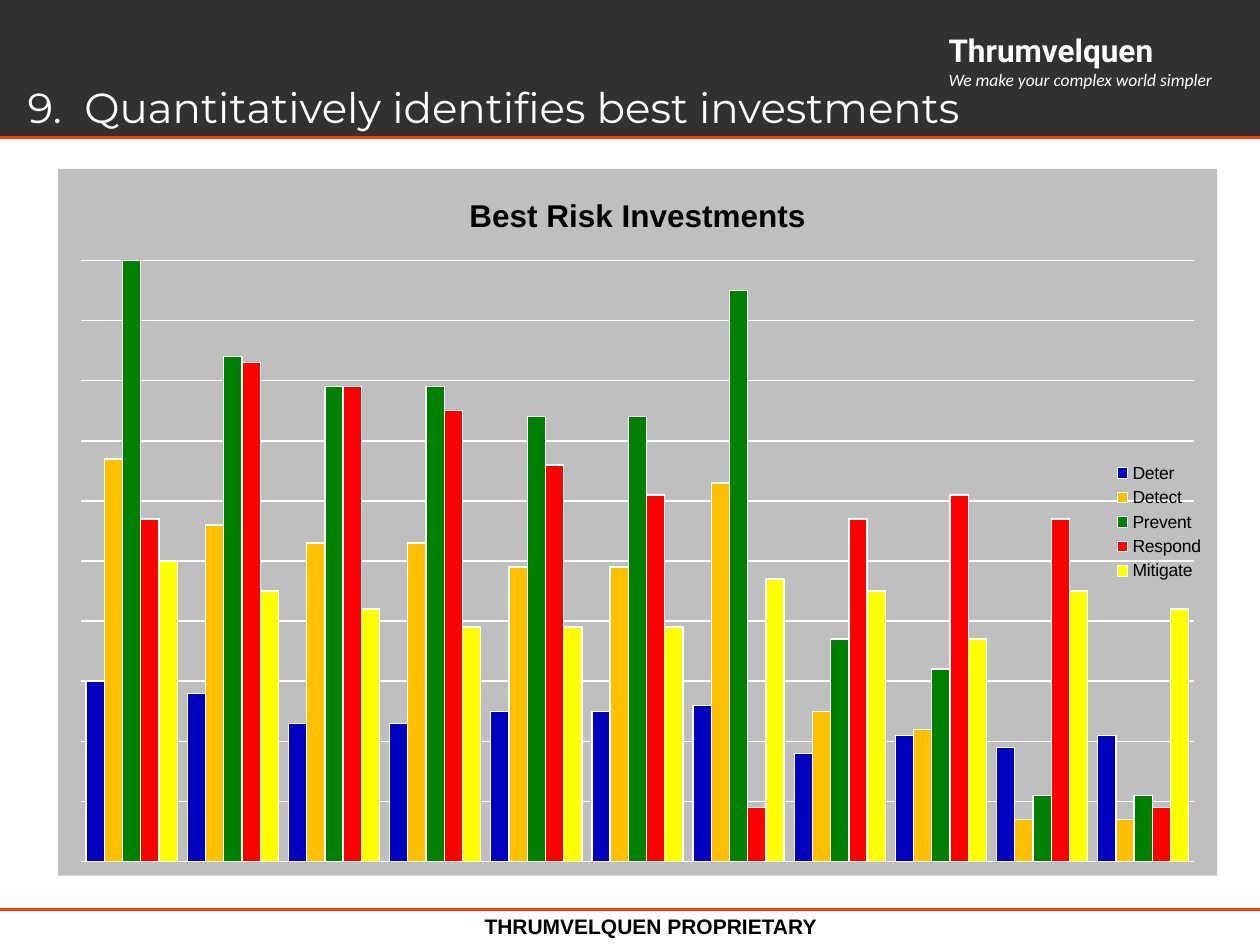
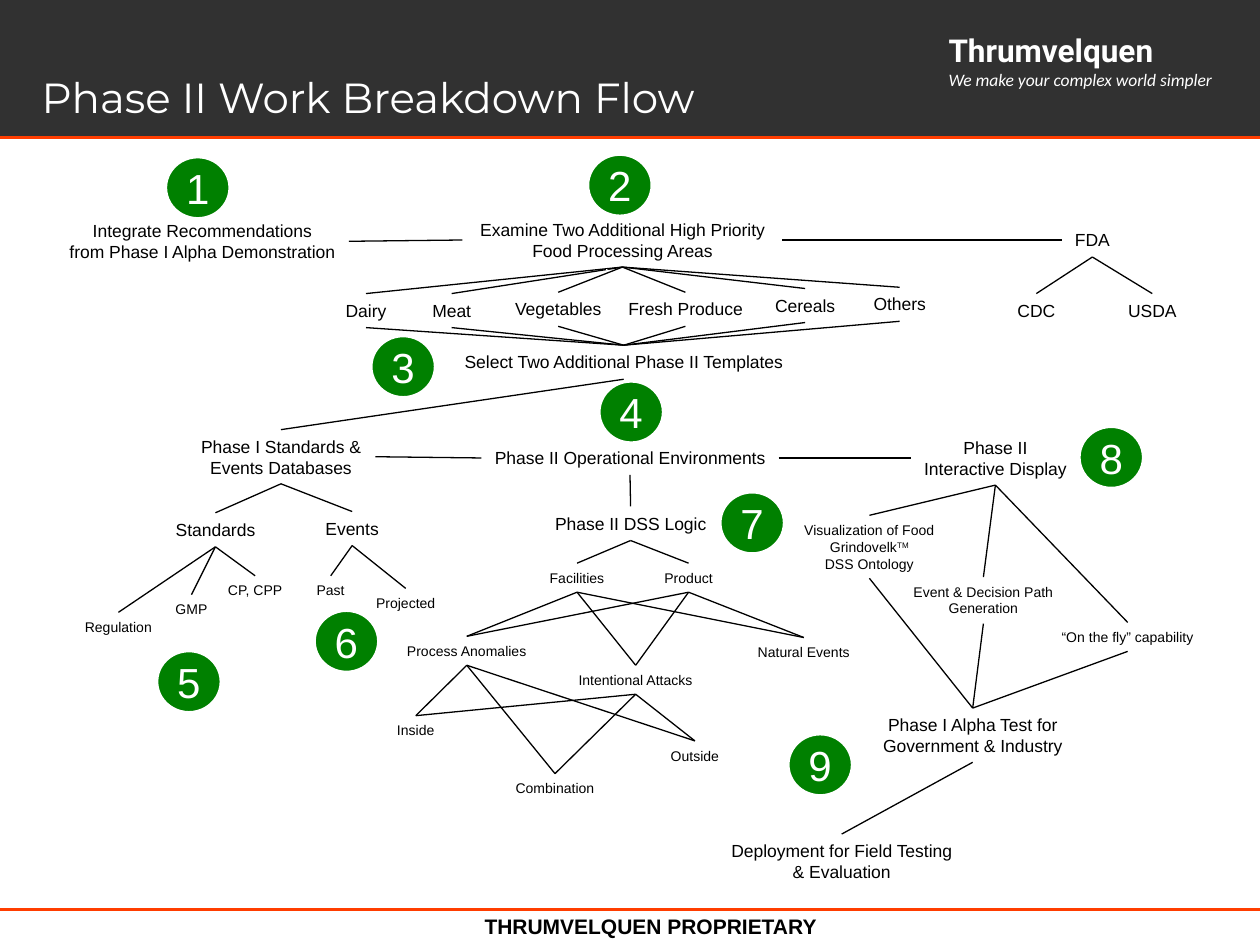
from lxml import etree
from pptx import Presentation
from pptx.chart.data import CategoryChartData
from pptx.dml.color import RGBColor
from pptx.enum.chart import XL_CHART_TYPE, XL_LEGEND_POSITION
from pptx.enum.shapes import MSO_CONNECTOR, MSO_SHAPE
from pptx.enum.text import MSO_ANCHOR, PP_ALIGN
from pptx.oxml import parse_xml
from pptx.oxml.ns import nsdecls, qn
from pptx.util import Inches, Pt

BLACK = RGBColor(0x00, 0x00, 0x00)
WHITE = RGBColor(0xFF, 0xFF, 0xFF)
CHARCOAL = RGBColor(0x31, 0x31, 0x31)
ORANGE = RGBColor(0xFF, 0x3D, 0x00)
GREEN = RGBColor(0x00, 0x80, 0x00)
BLUE = RGBColor(0x00, 0x00, 0xBF)
AMBER = RGBColor(0xFF, 0xC0, 0x00)
RED = RGBColor(0xFF, 0x00, 0x00)
YELLOW = RGBColor(0xFF, 0xFF, 0x00)
SILVER = "BFBFBF"

WIDTH, HEIGHT = 10, 7.5
RULES = (1.09, 7.22)
BRAND = "Thrumvelquen"
TAGLINE = "We make your complex world simpler"
FOOTER = "THRUMVELQUEN PROPRIETARY"

TITLE_FONT = {"name": "Montserrat", "size": Pt(24)}
BRAND_FONT = {"name": "Roboto", "size": Pt(18), "bold": True}
TAGLINE_FONT = {"name": "Calibri", "size": Pt(10), "italic": True}
FOOTER_FONT = {"name": "Arial", "size": Pt(12), "bold": True}
BADGE_FONT = {"name": "Arial", "size": Pt(24)}

CHART_TITLE = "Best Risk Investments"
INVESTMENTS = [
    ("Deter", BLUE, (30, 28, 23, 23, 25, 25, 26, 18, 21, 19, 21)),
    ("Detect", AMBER, (67, 56, 53, 53, 49, 49, 63, 25, 22, 7, 7)),
    ("Prevent", GREEN, (100, 84, 79, 79, 74, 74, 95, 37, 32, 11, 11)),
    ("Respond", RED, (57, 83, 79, 75, 66, 61, 9, 57, 61, 57, 9)),
    ("Mitigate", YELLOW, (50, 45, 42, 39, 39, 39, 47, 45, 37, 45, 42)),
]

# Text size: {key: (text, left, top, width[, rows when the text wraps])}
TASKS = {
    10: {
        "Integrate": ("Integrate Recommendations\nfrom Phase I Alpha Demonstration", 0.44, 1.7, 2.33),
        "Examine": ("Examine Two Additional High Priority\nFood Processing Areas", 3.67, 1.69, 2.54),
        "FDA": ("FDA", 8.43, 1.77, 0.48),
        "CDC": ("CDC", 7.97, 2.33, 0.51),
        "USDA": ("USDA", 8.85, 2.33, 0.59),
        "Dairy": ("Dairy", 2.64, 2.33, 0.53),
        "Meat": ("Meat", 3.33, 2.33, 0.51),
        "Vegetables": ("Vegetables", 3.98, 2.32, 0.9),
        "Produce": ("Fresh Produce", 4.88, 2.32, 1.12),
        "Cereals": ("Cereals", 6.05, 2.29, 0.68),
        "Others": ("Others", 6.83, 2.28, 0.62),
        "Select": ("Select Two Additional Phase II Templates", 3.56, 2.74, 2.78),
        "Databases": ("Phase I Standards & Events Databases", 1.48, 3.41, 1.5, 2),
        "Standards": ("Standards", 1.29, 4.07, 0.84),
        "Events": ("Events", 2.48, 4.06, 0.63),
        "Environments": ("Phase II Operational Environments", 3.82, 3.5, 2.36),
        "Logic": ("Phase II DSS Logic", 4.28, 4.02, 1.45),
        "Display": ("Phase II\nInteractive Display", 7.23, 3.42, 1.34),
        "Alpha": ("Phase I Alpha Test for Government & Industry", 6.59, 5.62, 2.26, 2),
        "Deployment": ("Deployment for Field Testing\n& Evaluation", 5.58, 6.62, 2.2),
    },
    8: {
        "Regulation": ("Regulation", 0.57, 4.86, 0.74),
        "GMP": ("GMP", 1.29, 4.72, 0.46),
        "CP": ("CP, CPP", 1.7, 4.57, 0.65),
        "Past": ("Past", 2.41, 4.57, 0.43),
        "Projected": ("Projected", 2.88, 4.67, 0.68),
        "Facilities": ("Facilities", 4.26, 4.47, 0.64),
        "Product": ("Product", 5.17, 4.47, 0.59),
        "Anomalies": ("Process Anomalies", 3.12, 5.05, 1.17),
        "Attacks": ("Intentional Attacks", 4.48, 5.28, 1.13),
        "Natural": ("Natural Events", 5.91, 5.06, 0.94),
        "Inside": ("Inside", 3.05, 5.68, 0.5),
        "Outside": ("Outside", 5.22, 5.88, 0.59),
        "Combination": ("Combination", 3.99, 6.14, 0.83),
        "Visualization": ("Visualization of Food Grindovelk™\nDSS Ontology", 6.16, 4.09, 1.48, 3),
        "Paths": ("Event & Decision Path Generation", 7.07, 4.58, 1.47, 2),
        "Capability": ("“On the fly” capability", 8.32, 4.94, 1.26),
    },
}
FOODS = ["Dairy", "Meat", "Vegetables", "Produce", "Cereals", "Others"]
DISPLAYS = ["Visualization", "Paths", "Capability"]
THREATS = ["Anomalies", "Attacks", "Natural"]
OUTCOMES = ["Inside", "Combination", "Outside"]
# Lines from the foot of the first task to the top of each of the others
BRANCHES = [
    ("Examine", FOODS[2:]), *[(food, ["Select"]) for food in FOODS],
    ("Select", ["Databases"]), ("FDA", ["CDC", "USDA"]),
    ("Databases", ["Standards", "Events"]),
    ("Standards", ["Regulation", "GMP", "CP"]), ("Events", ["Past", "Projected"]),
    ("Environments", ["Logic"]), ("Logic", ["Facilities", "Product"]),
    ("Facilities", THREATS), ("Product", THREATS),
    ("Anomalies", OUTCOMES), ("Attacks", OUTCOMES),
    ("Display", DISPLAYS), *[(part, ["Alpha"]) for part in DISPLAYS],
    ("Alpha", ["Deployment"]),
]
# Lines from the right side of one task to the left side of the next
CHAINS = [("Integrate", "Examine", "FDA"), ("Databases", "Environments", "Display")]
BADGES = [(1.32, 1.25), (4.67, 1.23), (2.95, 2.67), (4.76, 3.03), (1.25, 5.17),
          (2.5, 4.85), (5.72, 3.91), (8.57, 3.39), (6.26, 5.83)]


def inches(*lengths):
    return [Inches(length) for length in lengths]


def assign(target, **values):
    for name, value in values.items():
        setattr(target, name, value)


def add_span(para, text, color, font):
    span = para.add_run()
    span.text = text
    assign(span.font, **font)
    span.font.color.rgb = color
    return span


def add_text(page, place, lines, color=BLACK, align=PP_ALIGN.CENTER,
             wrap=False, anchor=MSO_ANCHOR.TOP):
    """Add a text box; lines are (text, font) pairs, and ™ becomes a raised TM."""
    frame = page.shapes.add_textbox(*inches(*place)).text_frame
    assign(frame, word_wrap=wrap, vertical_anchor=anchor)
    for index, (text, font) in enumerate(lines):
        para = frame.add_paragraph() if index else frame.paragraphs[0]
        para.alignment = align
        body, mark, _ = text.partition("™")
        add_span(para, body, color, font)
        if mark:
            raised = add_span(para, "TM", color, font)
            raised.font._element.set("baseline", "30000")


def add_line(page, start, end, color=BLACK, width=0.75):
    line = page.shapes.add_connector(MSO_CONNECTOR.STRAIGHT, *inches(*start, *end))
    line.line.color.rgb = color
    line.line.width = Pt(width)
    etree.SubElement(line._element.spPr, qn("a:effectLst"))


def add_shape(page, kind, place, color):
    shape = page.shapes.add_shape(kind, *inches(*place))
    shape.shadow.inherit = False
    shape.fill.solid()
    shape.fill.fore_color.rgb = color
    shape.line.fill.background()
    return shape


def move_band_to_layout(page):
    """Draw the shared band and rules, then hand them to the page's layout."""
    before = len(page.shapes)
    add_shape(page, MSO_SHAPE.RECTANGLE, (0, 0, WIDTH, 1.1), CHARCOAL)
    for top in RULES:
        add_line(page, (0, top), (WIDTH, top), ORANGE, 2)
    add_text(page, (7.43, 0.2, 2.3, 0.57),
             [(BRAND, BRAND_FONT), (TAGLINE, TAGLINE_FONT)], WHITE, PP_ALIGN.LEFT)
    for shape in list(page.shapes)[before:]:
        page.slide_layout.shapes._spTree.append(shape._element)


def add_page(deck, title, place):
    page = deck.slides.add_slide(deck.slide_layouts[5])
    heading = page.shapes.title
    assign(heading, **dict(zip(("left", "top", "width", "height"), inches(*place))))
    frame = heading.text_frame
    assign(frame, word_wrap=True, vertical_anchor=MSO_ANCHOR.BOTTOM, margin_left=0)
    para = frame.paragraphs[0]
    assign(para, alignment=PP_ALIGN.LEFT, line_spacing=0.85)
    if "\t" in title:
        tabs = etree.SubElement(para._p.get_or_add_pPr(), qn("a:tabLst"))
        etree.SubElement(tabs, qn("a:tab"), pos=str(Inches(0.45)), algn="l")
    add_span(para, title, WHITE, TITLE_FONT)
    add_text(page, (3.25, 6.98, 3.83, 0.52), [(FOOTER, FOOTER_FONT)],
             wrap=True, anchor=MSO_ANCHOR.BOTTOM)
    return page


def chart_layout(x, y, w, h, inner=False):
    """Return a manual layout given as shares of the chart's size."""
    target = '<c:layoutTarget val="inner"/>' if inner else ""
    sizes = "".join(f'<c:{name} val="{value}"/>'
                    for name, value in zip("xywh", (x, y, w, h)))
    return parse_xml(f'<c:layout {nsdecls("c")}><c:manualLayout>{target}'
                     '<c:xMode val="edge"/><c:yMode val="edge"/>'
                     f'{sizes}</c:manualLayout></c:layout>')


def add_investment_chart(page):
    data = CategoryChartData()
    data.categories = [str(number + 1) for number in range(len(INVESTMENTS[0][2]))]
    for name, _, values in INVESTMENTS:
        data.add_series(name, values)
    chart = page.shapes.add_chart(XL_CHART_TYPE.COLUMN_CLUSTERED,
                                  *inches(0.46, 1.34, 9.2, 5.61), data).chart
    assign(chart.font, name="Arial", size=Pt(10))
    chart.font.color.rgb = BLACK
    title = chart.chart_title
    add_span(title.text_frame.paragraphs[0], CHART_TITLE, BLACK,
             {"name": "Arial", "size": Pt(18), "bold": True})
    title._element.get_or_add_overlay().set("val", "1") if hasattr(
        title._element, "get_or_add_overlay") else None

    chart.category_axis.visible = False
    values_axis = chart.value_axis
    assign(values_axis, visible=False, minimum_scale=0, maximum_scale=100,
           major_unit=10, has_major_gridlines=True)
    grid = values_axis.major_gridlines.format.line
    grid.color.rgb = WHITE
    grid.width = Pt(0.75)

    plot = chart.plots[0]
    assign(plot, gap_width=55, overlap=0, vary_by_categories=False)
    for series, (_, color, _) in zip(plot.series, INVESTMENTS):
        series.format.fill.solid()
        series.format.fill.fore_color.rgb = color
        series.format.line.color.rgb = WHITE
        series.format.line.width = Pt(0.75)

    chart.has_legend = True
    assign(chart.legend, position=XL_LEGEND_POSITION.RIGHT, include_in_layout=False)
    legend = chart.legend._element
    legend.find(qn("c:legendPos")).addnext(chart_layout(0.91, 0.41, 0.08, 0.18))
    legend.find(qn("c:overlay")).set("val", "1")
    area = chart._chartSpace.chart.plotArea
    for layout in area.findall(qn("c:layout")):
        area.remove(layout)
    area.insert(0, chart_layout(0.02, 0.13, 0.96, 0.85, inner=True))
    chart._chartSpace.chart.addnext(parse_xml(
        f'<c:spPr {nsdecls("c", "a")}><a:solidFill><a:srgbClr val="{SILVER}"/>'
        '</a:solidFill><a:ln><a:noFill/></a:ln></c:spPr>'))


def add_tasks(page):
    """Write every task and return its left, top, width and height by key."""
    places = {}
    for size, tasks in TASKS.items():
        for key, (text, left, top, width, *wrapped) in tasks.items():
            lines = text.split("\n")
            rows = wrapped[0] if wrapped else len(lines)
            height = round(0.1 + rows * size / 60, 2)
            places[key] = (left, top, width, height)
            font = {"name": "Arial", "size": Pt(size)}
            add_text(page, places[key], [(line, font) for line in lines],
                     wrap=bool(wrapped))
    return places


def add_flow(page):
    places = add_tasks(page)

    def point(key, across, down):
        left, top, width, height = places[key]
        return left + across * width, top + down * height

    def branch(parent, children):
        for child in children:
            add_line(page, point(parent, 0.5, 1), point(child, 0.5, 0))

    branch("Examine", FOODS[:2])
    add_line(page, (4.98, 2.21), (4.81, 2.14), WHITE)
    for parent, children in BRANCHES:
        branch(parent, children)
    for chain in CHAINS:
        for before, after in zip(chain, chain[1:]):
            add_line(page, point(before, 1, 0.5), point(after, 0, 0.5))

    for number, (left, top) in enumerate(BADGES, 1):
        badge = add_shape(page, MSO_SHAPE.OVAL, (left, top, 0.5, 0.48), GREEN)
        badge.line.color.rgb = WHITE
        badge.line.width = Pt(1)
        assign(badge.text_frame, word_wrap=False, vertical_anchor=MSO_ANCHOR.MIDDLE)
        para = badge.text_frame.paragraphs[0]
        para.alignment = PP_ALIGN.CENTER
        add_span(para, str(number), WHITE, BADGE_FONT)


def main():
    deck = Presentation()
    assign(deck, slide_width=Inches(WIDTH), slide_height=Inches(HEIGHT))
    chart_page = add_page(deck, "9.\tQuantitatively identifies best investments",
                          (0.22, 0.19, 10.7, 0.91))
    move_band_to_layout(chart_page)
    add_investment_chart(chart_page)
    flow_page = add_page(deck, "Phase II Work Breakdown Flow", (0.33, 0.11, 6.7, 0.91))
    add_flow(flow_page)
    deck.save("out.pptx")


if __name__ == "__main__":
    main()
